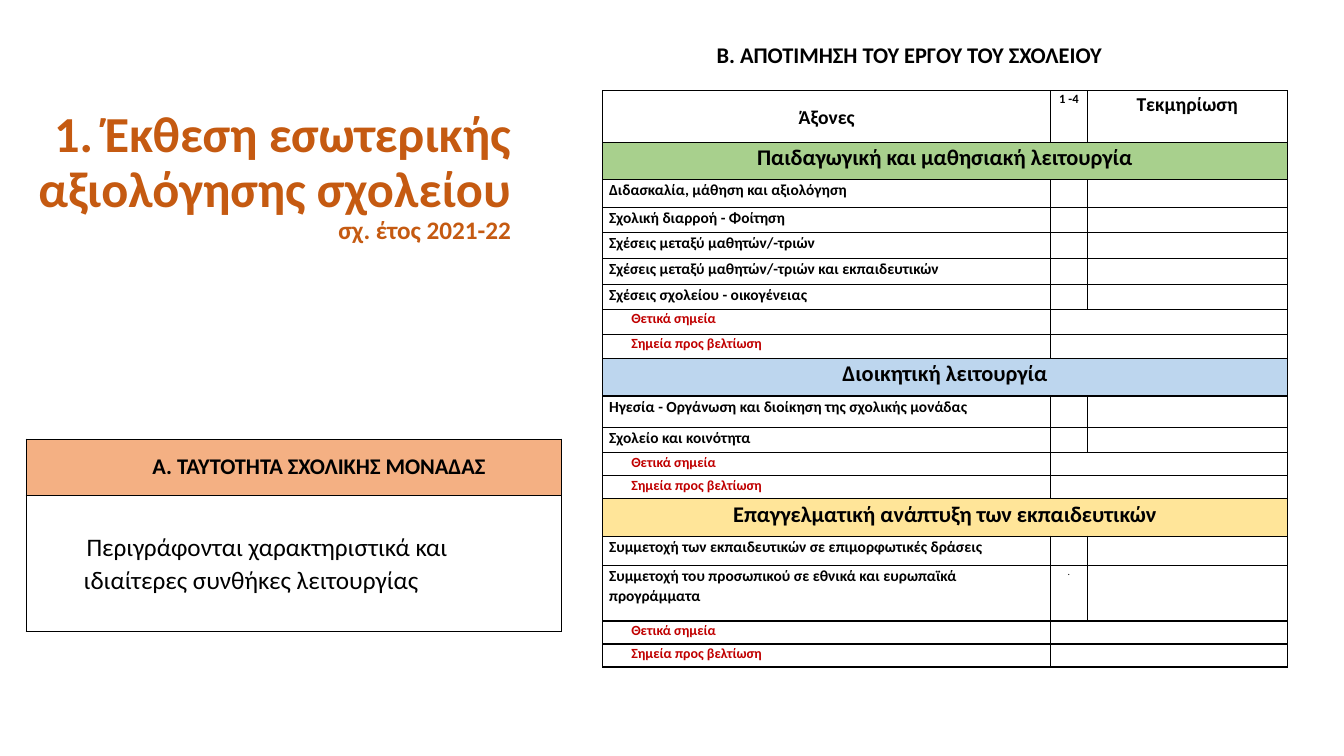
from lxml.etree import SubElement
from pptx import Presentation
from pptx.dml.color import RGBColor
from pptx.enum.text import MSO_ANCHOR as Anchor, PP_ALIGN as Align
from pptx.oxml.ns import qn
from pptx.util import Cm, Pt

COLORS = {
    "title": "C55A11", "text": "000000", "note": "C00000", "white": "FFFFFF",
    "identity": "F4B083", "teaching": "A8D08D", "admin": "BDD6EE", "growth": "FFE599",
}
FONT = "Calibri"

TITLE = "1. Έκθεση εσωτερικής αξιολόγησης σχολείου"
SCHOOL_YEAR = "σχ. έτος 2021-22"
IDENTITY_HEADING = "Α. ΤΑΥΤΟΤΗΤΑ ΣΧΟΛΙΚΗΣ ΜΟΝΑΔΑΣ"
IDENTITY_BODY = "Περιγράφονται χαρακτηριστικά και ιδιαίτερες συνθήκες λειτουργίας"
APPRAISAL_HEADING = "Β. ΑΠΟΤΙΜΗΣΗ ΤΟΥ ΕΡΓΟΥ ΤΟΥ ΣΧΟΛΕΙΟΥ"
HEADERS = [("Άξονες", 14, Anchor.MIDDLE), ("1 -4", 9, Anchor.TOP), ("Τεκμηρίωση", 14, Anchor.TOP)]
NOTES = ["Θετικά σημεία", "Σημεία προς βελτίωση"]
SECTIONS = [
    ("Παιδαγωγική και μαθησιακή λειτουργία", "teaching", [
        ("Διδασκαλία, μάθηση και αξιολόγηση", "", 0.69),
        ("Σχολική διαρροή - Φοίτηση", "", 0.64),
        ("Σχέσεις μεταξύ μαθητών/-τριών", "", 0.65),
        ("Σχέσεις μεταξύ μαθητών/-τριών και εκπαιδευτικών", "", 0.65),
        ("Σχέσεις σχολείου - οικογένειας", "", 0.64),
    ], 0.62),
    ("Διοικητική λειτουργία", "admin", [
        ("Ηγεσία - Οργάνωση και διοίκηση της σχολικής μονάδας", "", 0.79),
        ("Σχολείο και κοινότητα", "", 0.64),
    ], 0.58),
    ("Επαγγελματική ανάπτυξη των εκπαιδευτικών", "growth", [
        ("Συμμετοχή των εκπαιδευτικών σε επιμορφωτικές δράσεις", "", 0.74),
        ("Συμμετοχή του προσωπικού σε εθνικά και ευρωπαϊκά προγράμματα", ".", 1.4),
    ], 0.58),
]
HEADER_HEIGHT, BANNER_HEIGHT = 1.3, 0.94
IDENTITY_HEIGHTS = [1.42, 3.43]
APPRAISAL_WIDTHS = [11.29, 0.92, 5.04]


def add_text(paragraph, text, size, color="text", bold=True):
    run = paragraph.add_run()
    run.text = text
    run.font.name = FONT
    run.font.size = Pt(size)
    run.font.bold = bold
    run.font.color.rgb = RGBColor.from_string(COLORS[color])


def add_box(slide, left, top, width, height):
    frame = slide.shapes.add_textbox(Cm(left), Cm(top), Cm(width), Cm(height)).text_frame
    frame.word_wrap = True
    return frame


def style_cell(cell, margin):
    cell.margin_left = cell.margin_right = Cm(margin)
    cell.margin_top = cell.margin_bottom = 0
    properties = cell._tc.get_or_add_tcPr()
    for side in ("lnL", "lnR", "lnT", "lnB"):
        border = SubElement(properties, qn(f"a:{side}"), w=str(Pt(1)))
        paint = SubElement(border, qn("a:solidFill"))
        SubElement(paint, qn("a:srgbClr"), val=COLORS["text"])
    cell.fill.background()


def add_grid(slide, left, top, widths, heights, margin):
    grid = slide.shapes.add_table(
        len(heights), len(widths), Cm(left), Cm(top), Cm(sum(widths)), Cm(sum(heights))).table
    grid.first_row = grid.horz_banding = False
    for column, width in zip(grid.columns, widths):
        column.width = Cm(width)
    for row, height in zip(grid.rows, heights):
        row.height = Cm(height)
    for cell in grid.iter_cells():
        style_cell(cell, margin)
    return grid


def fill_cell(cell, text, size, color="text", bold=True, fill=None, align=Align.LEFT, indent=0):
    paragraph = cell.text_frame.paragraphs[0]
    paragraph.alignment = align
    paragraph.line_spacing = 1.07
    if indent:
        paragraph._p.get_or_add_pPr().set("marL", str(Cm(indent)))
    if text:
        add_text(paragraph, text, size, color, bold)
    else:
        SubElement(paragraph._p, qn("a:endParaRPr"), sz=str(size * 100))
    if fill:
        cell.fill.solid()
        cell.fill.fore_color.rgb = RGBColor.from_string(COLORS[fill])
    return paragraph


def add_title(slide):
    frame = add_box(slide, 0.66, 0.99, 12.47, 6.96)
    frame.vertical_anchor = Anchor.MIDDLE
    paragraph = frame.paragraphs[0]
    paragraph.alignment = Align.RIGHT
    paragraph.line_spacing = 0.9
    add_text(paragraph, TITLE, 36, "title")
    paragraph.add_line_break()
    add_text(paragraph, SCHOOL_YEAR, 18, "title")


def add_identity(slide):
    grid = add_grid(slide, 0.66, 11.07, [13.49], IDENTITY_HEIGHTS, 0.18)
    heading = fill_cell(grid.cell(0, 0), IDENTITY_HEADING, 16,
                        fill="identity", align=Align.CENTER, indent=1.27)
    heading.line_spacing = 1.5
    heading.space_before = heading.space_after = Pt(6)
    body = fill_cell(grid.cell(1, 0), IDENTITY_BODY, 18, bold=False, indent=1.27)
    body._p.pPr.set("indent", str(Cm(0.07)))
    grid.cell(1, 0).vertical_anchor = Anchor.MIDDLE


def add_appraisal(slide):
    add_text(add_box(slide, 17.81, 0.91, 13.39, 0.94).paragraphs[0], APPRAISAL_HEADING, 16)
    heights = [HEADER_HEIGHT]
    for _, _, axes, note_height in SECTIONS:
        heights += [BANNER_HEIGHT, *(height for _, _, height in axes), *[note_height] * len(NOTES)]
    grid = add_grid(slide, 15.19, 2.29, APPRAISAL_WIDTHS, heights, 0.16)

    for column, (label, size, anchor) in enumerate(HEADERS):
        cell = grid.cell(0, column)
        fill_cell(cell, label, size, fill="white", align=Align.CENTER)
        cell.vertical_anchor = anchor

    row = 1
    for section, color, axes, _ in SECTIONS:
        grid.cell(row, 0).merge(grid.cell(row, 2))
        fill_cell(grid.cell(row, 0), section, 16, fill=color, align=Align.CENTER)
        row += 1
        for axis, score, _ in axes:
            fill_cell(grid.cell(row, 0), axis, 11)
            fill_cell(grid.cell(row, 1), score, 7, bold=False, align=Align.CENTER)
            fill_cell(grid.cell(row, 2), "", 7)
            row += 1
        for note in NOTES:
            grid.cell(row, 1).merge(grid.cell(row, 2))
            fill_cell(grid.cell(row, 0), note, 10, "note", indent=0.56)
            fill_cell(grid.cell(row, 1), "", 7)
            row += 1


def main():
    deck = Presentation()
    deck.slide_width, deck.slide_height = Cm(33.87), Cm(19.05)
    slide = deck.slides.add_slide(deck.slide_layouts[6])
    add_title(slide)
    add_identity(slide)
    add_appraisal(slide)
    deck.save("out.pptx")


if __name__ == "__main__":
    main()
